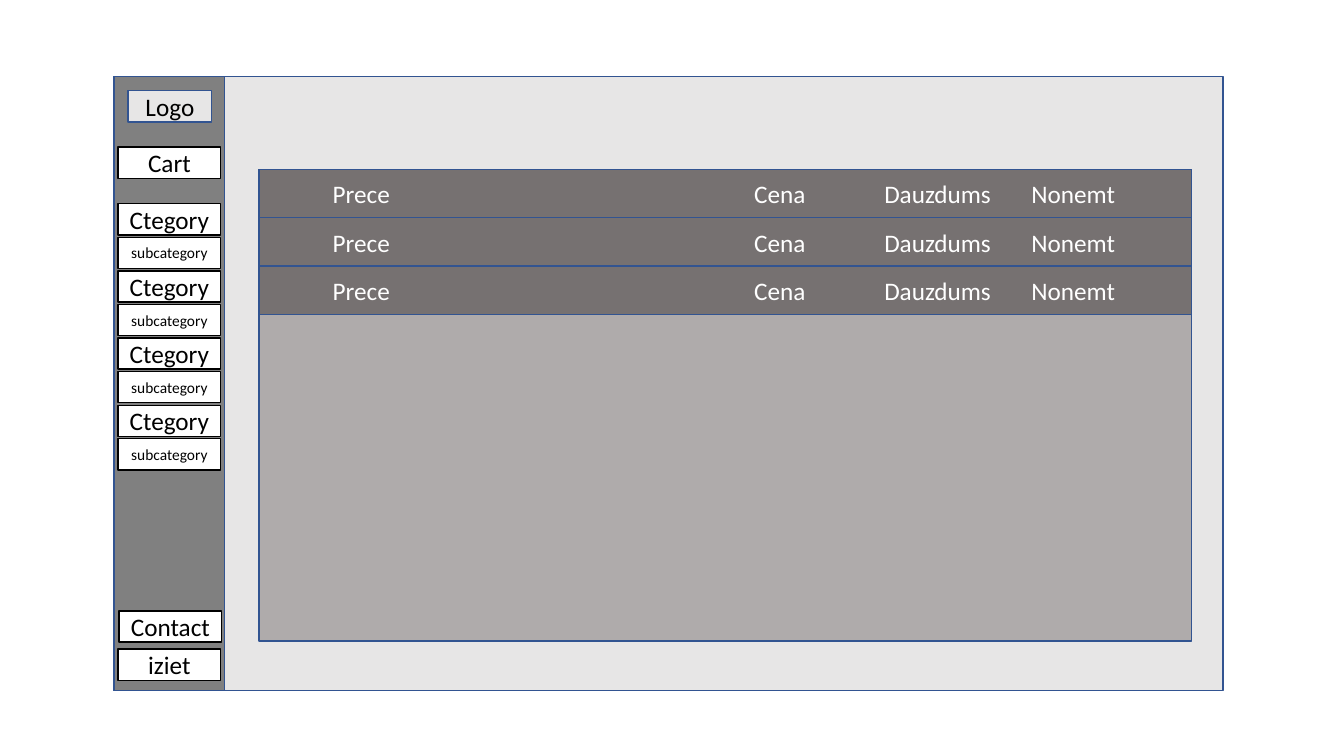
from lxml import etree
from pptx import Presentation
from pptx import util as u
from pptx.dml.color import RGBColor
from pptx.enum import shapes, text
from pptx.oxml.ns import qn

COLORS = {
    "page": "E7E6E6", "sidebar": "808080", "panel": "AFABAB", "row": "767171",
    "edge": "325491", "black": "000000", "white": "FFFFFF",
}
CELL = u.Inches(0.1)  # the slide is a grid of 133.3 columns by 75 rows


def rgb(name):
    return RGBColor.from_string(COLORS[name])


class Wireframe:
    font = "Calibri"
    size = 18

    def __init__(self, slide):
        self.s = slide

    def box(self, col, row, cols, rows, fill, line="edge"):
        sp = self.s.shapes.add_shape(
            shapes.MSO_SHAPE.RECTANGLE,
            *(u.Emu(round(n * CELL)) for n in (col, row, cols, rows)))
        sp.shadow.inherit = False
        sp.fill.solid()
        sp.fill.fore_color.rgb = rgb(fill)
        sp.line.color.rgb = rgb(line)
        sp.line.width = u.Pt(1)
        return sp

    def label(self, sp, words, color, size=None, align=text.PP_ALIGN.CENTER):
        tf = sp.text_frame
        tf.margin_left = tf.margin_right = tf.margin_top = tf.margin_bottom = 0
        tf.vertical_anchor = text.MSO_ANCHOR.MIDDLE
        p = tf.paragraphs[0]
        p.text = words
        p.alignment = align
        p.font.name = self.font
        p.font.size = u.Pt(size or self.size)
        p.font.color.rgb = rgb(color)
        return p

    def button(self, words, row, col=11.7, cols=10.2, fill="white",
               line="black", size=None):
        sp = self.box(col, row, cols, 3.1, fill, line)
        self.label(sp, words, "black", size)

    def cart_row(self, row, words, stops):
        """Draw a full-width row with each word starting at its column."""
        left = 25.7
        sp = self.box(left, row, 92.5, 4.8, "row")
        p = self.label(sp, "\t".join(words), "white", align=text.PP_ALIGN.LEFT)
        sp.text_frame.margin_left = u.Emu(round((stops[0] - left) * CELL))
        tabs = etree.Element(qn("a:tabLst"))
        for stop in stops[1:]:
            etree.SubElement(tabs, qn("a:tab"), algn="l",
                             pos=str(round((stop - stops[0]) * CELL)))
        # the schema wants the tab list ahead of the default run properties
        p._p.get_or_add_pPr().insert(0, tabs)


def main():
    prs = Presentation()
    prs.slide_width, prs.slide_height = u.Inches(13.33), u.Inches(7.5)
    w = Wireframe(prs.slides.add_slide(prs.slide_layouts[6]))

    w.box(11.3, 7.6, 110, 60.9, "page")
    w.box(11.3, 7.6, 11, 60.9, "sidebar")
    w.button("Logo", 9, col=12.7, cols=8.3, fill="page", line="edge")

    for i in range(8):
        words, size = (("Ctegory", 18), ("subcategory", 11))[i % 2]
        w.button(words, 20.2 + i * 10 / 3, size=size)
    w.button("Cart", 14.6)

    w.box(25.7, 16.8, 92.5, 46.8, "panel")
    for i in range(3):
        w.cart_row(16.8 + 4.8 * i, ("Prece", "Cena", "Dauzdums", "Nonemt"),
                   (33, 74.8, 87.7, 102.3))

    w.button("Contact", 60.6, col=11.8)
    w.button("iziet", 64.4)
    prs.save("out.pptx")


if __name__ == "__main__":
    main()
